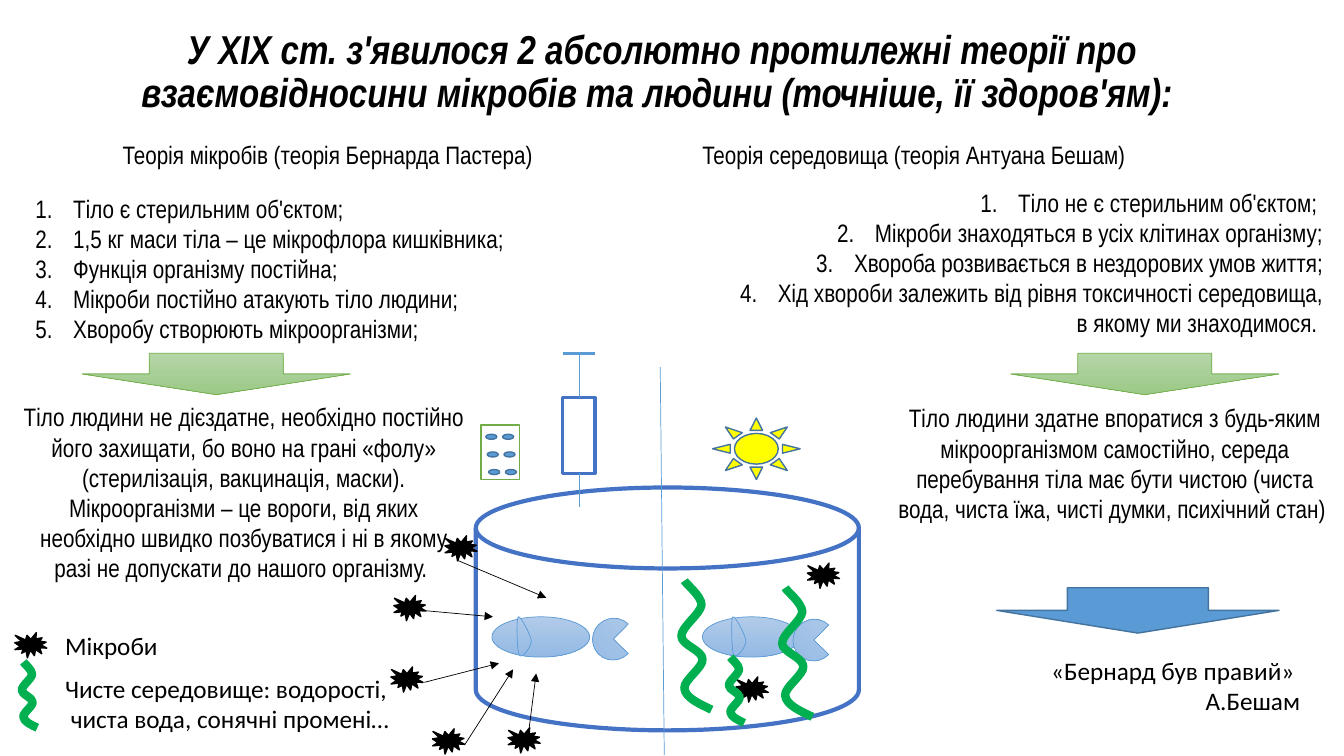
from lxml.etree import SubElement
from pptx import Presentation
from pptx.dml.color import RGBColor
from pptx.enum.shapes import MSO_CONNECTOR, MSO_SHAPE
from pptx.enum.text import MSO_ANCHOR, MSO_AUTO_SIZE, PP_ALIGN
from pptx.oxml.ns import qn
from pptx.util import Pt

BLACK = RGBColor(0x00, 0x00, 0x00)
WHITE = RGBColor(0xFF, 0xFF, 0xFF)
BLUE = RGBColor(0x5B, 0x9B, 0xD5)
DARK_BLUE = RGBColor(0x43, 0x73, 0x9E)
VESSEL_BLUE = RGBColor(0x44, 0x72, 0xC4)
GREEN = RGBColor(0x70, 0xAD, 0x47)
ALGAE_GREEN = RGBColor(0x00, 0xB0, 0x50)
YELLOW = RGBColor(0xFF, 0xFF, 0x00)
GREEN_FADE = (RGBColor(0xB5, 0xD5, 0xA7), RGBColor(0x9C, 0xC9, 0x87))
BLUE_FADE = (RGBColor(0xB1, 0xCB, 0xE9), RGBColor(0x93, 0xB9, 0xE4))

ALGA_CURVE = [
    (21.6, 92.2), (12.2, 87.8), (2.9, 83.5), (2.2, 77),
    (1.4, 71.3), (15.8, 61.9), (15.1, 56.2),
    (15.1, 49.7), (0, 46.1), (0, 39.6),
    (0, 33.1), (13.7, 23.8), (14.4, 17.3),
    (14.4, 10.8), (2.9, 2.2), (2.2, 0),
]
GILL_CURVE = [
    (0.7, 0), (-0.7, 2.2), (0, 24.5), (1.4, 27.4),
    (3.6, 30.2), (10.1, 21.6), (10.1, 17.3),
    (10.1, 13.7), (2.2, -1.4), (0.7, 0),
]
ALGAE = [(486.7, 414.7, 1), (558.7, 419.8, 1), (520.6, 469.4, 0.51), (15.6, 472.8, 0.51)]
MICROBES = [
    (279.2, 476.4), (362.9, 519.8), (308.9, 520.6), (576.7, 402.2),
    (525.8, 483.5), (281.3, 425.4), (317.8, 382.7), (10.5, 451.9),
]
ATTACKS = [
    (304.6, 436.3, 352.1, 440.6), (326.9, 400.3, 390.2, 427),
    (303.1, 487.4, 356.4, 473.8), (331.9, 532.1, 366.5, 478.1),
    (378, 519.8, 383, 481),
]
PASTEUR_POINTS = [
    "Тіло є стерильним об'єктом;",
    "1,5 кг маси тіла – це мікрофлора кишківника;",
    "Функція організму постійна;",
    "Мікроби постійно атакують тіло людини;",
    "Хворобу створюють мікроорганізми;",
]
BECHAMP_POINTS = [
    "Тіло не є стерильним об'єктом; ",
    "Мікроби знаходяться в усіх клітинах організму;",
    "Хвороба розвивається в нездорових умов життя;",
    "Хід хвороби залежить від рівня токсичності середовища, в якому ми знаходимося. ",
]


def add_text(slide, box, lines, font="Arial Narrow", size=18, bold=False, italic=False,
             alignments=(PP_ALIGN.LEFT,), numbered=False, wrap=True, grow=True,
             anchor=MSO_ANCHOR.TOP, spacing=None):
    """Add a text box with one paragraph per line."""
    frame = slide.shapes.add_textbox(*map(Pt, box)).text_frame
    frame.word_wrap = wrap
    frame.auto_size = MSO_AUTO_SIZE.SHAPE_TO_FIT_TEXT if grow else MSO_AUTO_SIZE.NONE
    frame.vertical_anchor = anchor
    for index, line in enumerate(lines):
        paragraph = frame.paragraphs[0] if index == 0 else frame.add_paragraph()
        paragraph.alignment = alignments[min(index, len(alignments) - 1)]
        paragraph.line_spacing = spacing
        run = paragraph.add_run()
        run.text = line
        run.font.name, run.font.size = font, Pt(size)
        run.font.bold, run.font.italic = bold, italic
        run.font.color.rgb = BLACK
        if numbered:
            properties = paragraph._p.get_or_add_pPr()
            properties.set("marL", str(Pt(27)))
            properties.set("indent", str(-Pt(27)))
            SubElement(properties, qn("a:buFont"), typeface="+mj-lt")
            SubElement(properties, qn("a:buAutoNum"), type="arabicPeriod")


def paint(shape, fill, line, width):
    """Set a plain, faded or empty fill and the outline of a shape."""
    shape.shadow.inherit = False
    if fill is None:
        shape.fill.background()
    elif isinstance(fill, RGBColor):
        shape.fill.solid()
        shape.fill.fore_color.rgb = fill
    else:
        shape.fill.gradient()
        shape.fill.gradient_angle = 270
        for stop, color in zip(shape.fill.gradient_stops, fill):
            stop.color.rgb = color
    shape.line.color.rgb = line
    shape.line.width = Pt(width)


def add_preset(parent, kind, box, fill, line, width=1, rotation=0):
    """Add a painted preset shape."""
    shape = parent.shapes.add_shape(kind, *map(Pt, box))
    shape.rotation = rotation
    paint(shape, fill, line, width)


def add_line(slide, ends, color, width=0.5, arrow=False):
    """Add a straight line, with an arrowhead at its end if asked."""
    connector = slide.shapes.add_connector(MSO_CONNECTOR.STRAIGHT, *map(Pt, ends))
    connector.line.color.rgb = color
    connector.line.width = Pt(width)
    properties = connector.element.spPr
    if arrow:
        SubElement(properties.find(qn("a:ln")), qn("a:tailEnd"), type="triangle")
    SubElement(properties, qn("a:effectLst"))


def add_curve(slide, controls, left, top, line, width, scale=1, fill=None):
    """Add a chain of cubic curves, closed when it has a fill."""
    points = [(Pt(left + x * scale), Pt(top + y * scale)) for x, y in controls]
    builder = slide.shapes.build_freeform(*points[0], scale=1.0)
    builder.add_line_segments(points[1:], close=fill is not None)
    shape = builder.convert_to_shape()
    segments = list(shape.element.iter(qn("a:lnTo")))
    for first in range(0, len(segments), 3):
        curve = segments[first]
        outline = curve.getparent()
        bezier = SubElement(outline, qn("a:cubicBezTo"))
        outline.replace(curve, bezier)
        for segment in segments[first:first + 3]:
            bezier.append(segment[0])
            if segment is not curve:
                outline.remove(segment)
    paint(shape, fill, line, width)


def add_fish(slide, body_left, tail_left, tail_top, gill_left):
    """Add a fish made of a body, a tail and a gill."""
    add_preset(slide, MSO_SHAPE.OVAL, (body_left, 440.6, 69.8, 28.8), BLUE_FADE, BLUE, 0.5)
    add_preset(slide, MSO_SHAPE.PIE, (tail_left, tail_top, 29.5, 30.2), BLUE_FADE, BLUE, 0.5, 44.4)
    add_curve(slide, GILL_CURVE, gill_left, 440.6, BLUE, 0.5, fill=BLUE_FADE)


def add_pill_pack(slide):
    """Add a grouped pack with three rows of two pills."""
    pack = slide.shapes.add_group_shape()
    add_preset(pack, MSO_SHAPE.RECTANGLE, (343.6, 303.5, 27.4, 38.9), WHITE, GREEN)
    for row in range(3):
        for column in range(2):
            box = (347 + row + 12 * column, 310.2 + 12.6 * row, 7.9, 3.6)
            add_preset(pack, MSO_SHAPE.OVAL, box, BLUE, DARK_BLUE)


def add_syringe(slide):
    """Add a syringe with its needle and plunger."""
    add_preset(slide, MSO_SHAPE.RECTANGLE, (402, 284.1, 23, 54), WHITE, VESSEL_BLUE, 2.25)
    add_line(slide, (413.6, 338.1, 413.6, 362.2), BLUE)
    add_line(slide, (413.6, 284.1, 413.6, 252.5), BLUE)
    add_line(slide, (402, 252.5, 425, 252.5), BLUE, 2.25)


def add_theories(slide):
    """Add the title and the two columns of text."""
    center, right = (PP_ALIGN.CENTER,), (PP_ALIGN.RIGHT,)
    add_text(slide, (59, 0, 828, 104.4),
             ["У ХІХ ст. з'явилося 2 абсолютно протилежні теорії про взаємовідносини "
              "мікробів та людини (точніше, її здоров'ям): "],
             size=28.8, bold=True, italic=True, alignments=center, grow=False,
             anchor=MSO_ANCHOR.MIDDLE, spacing=0.9)
    add_text(slide, (80.6, 95.8, 365.8, 28.8), ["Теорія мікробів (теорія Бернарда Пастера)"])
    add_text(slide, (494.6, 95.8, 393, 28.8), ["Теорія середовища (теорія Антуана Бешам)"])
    add_text(slide, (18.2, 134.2, 362.9, 138.2), PASTEUR_POINTS, numbered=True)
    add_text(slide, (519.5, 129.9, 432.7, 181.4), BECHAMP_POINTS, numbered=True, alignments=right)
    add_text(slide, (8.6, 283.3, 331.2, 138.2),
             ["Тіло людини не дієздатне, необхідно постійно його захищати, бо воно на грані "
              "«фолу» (стерилізація, вакцинація, маски). Мікроорганізми – це вороги, від яких "
              "необхідно швидко позбуватися і ні в якому разі не допускати до нашого організму. "],
             alignments=center)
    add_text(slide, (633.7, 284.1, 325.4, 94.3),
             ["Тіло людини здатне впоратися з будь-яким мікроорганізмом самостійно, середа "
              "перебування тіла має бути чистою (чиста вода, чиста їжа, чисті думки, "
              "психічний стан) "], alignments=center)
    for left in (58.8, 722):
        add_preset(slide, MSO_SHAPE.DOWN_ARROW, (left, 252.4, 191.5, 29.5), GREEN_FADE, GREEN, 0.5)
    add_preset(slide, MSO_SHAPE.DOWN_ARROW, (712, 419.8, 201.6, 32.4), BLUE, DARK_BLUE)


def add_aquarium(slide):
    """Add the divided vessel with fish, microbes and algae."""
    add_preset(slide, MSO_SHAPE.FLOWCHART_MAGNETIC_DISK, (339.9, 348.2, 273.6, 173.5),
               WHITE, VESSEL_BLUE, 3)
    add_fish(slide, 351.4, 423.4, 441.4, 369.4)
    add_fish(slide, 501.8, 566.6, 442.1, 522.7)
    add_line(slide, (471.6, 262.1, 474.5, 539.3), BLUE)
    for left, top in MICROBES:
        add_preset(slide, MSO_SHAPE.EXPLOSION1, (left, top, 23, 18), BLACK, BLACK)
    for left, top, scale in ALGAE:
        add_curve(slide, ALGA_CURVE, left, top, ALGAE_GREEN, 6, scale)
    add_preset(slide, MSO_SHAPE.SUN, (509, 298.6, 62.6, 43.9), YELLOW, DARK_BLUE)
    for ends in ATTACKS:
        add_line(slide, ends, BLACK, arrow=True)


def main():
    """Build and save the slide."""
    presentation = Presentation()
    presentation.slide_width, presentation.slide_height = Pt(960), Pt(540)
    slide = presentation.slides.add_slide(presentation.slide_layouts[6])
    add_theories(slide)
    add_aquarium(slide)
    add_pill_pack(slide)
    add_syringe(slide)
    add_text(slide, (39.4, 446.8, 81.4, 28.8), ["Мікроби"], font="Calibri", wrap=False)
    add_text(slide, (39.4, 477.4, 248.4, 51.1),
             ["Чисте середовище: водорості,", " чиста вода, сонячні промені…"],
             font="Calibri", wrap=False)
    add_text(slide, (743.8, 464.4, 194.4, 51.1), ["«Бернард був правий» ", "А.Бешам"],
             font="Calibri", wrap=False, alignments=(PP_ALIGN.LEFT, PP_ALIGN.RIGHT))
    presentation.save("out.pptx")


if __name__ == "__main__":
    main()
